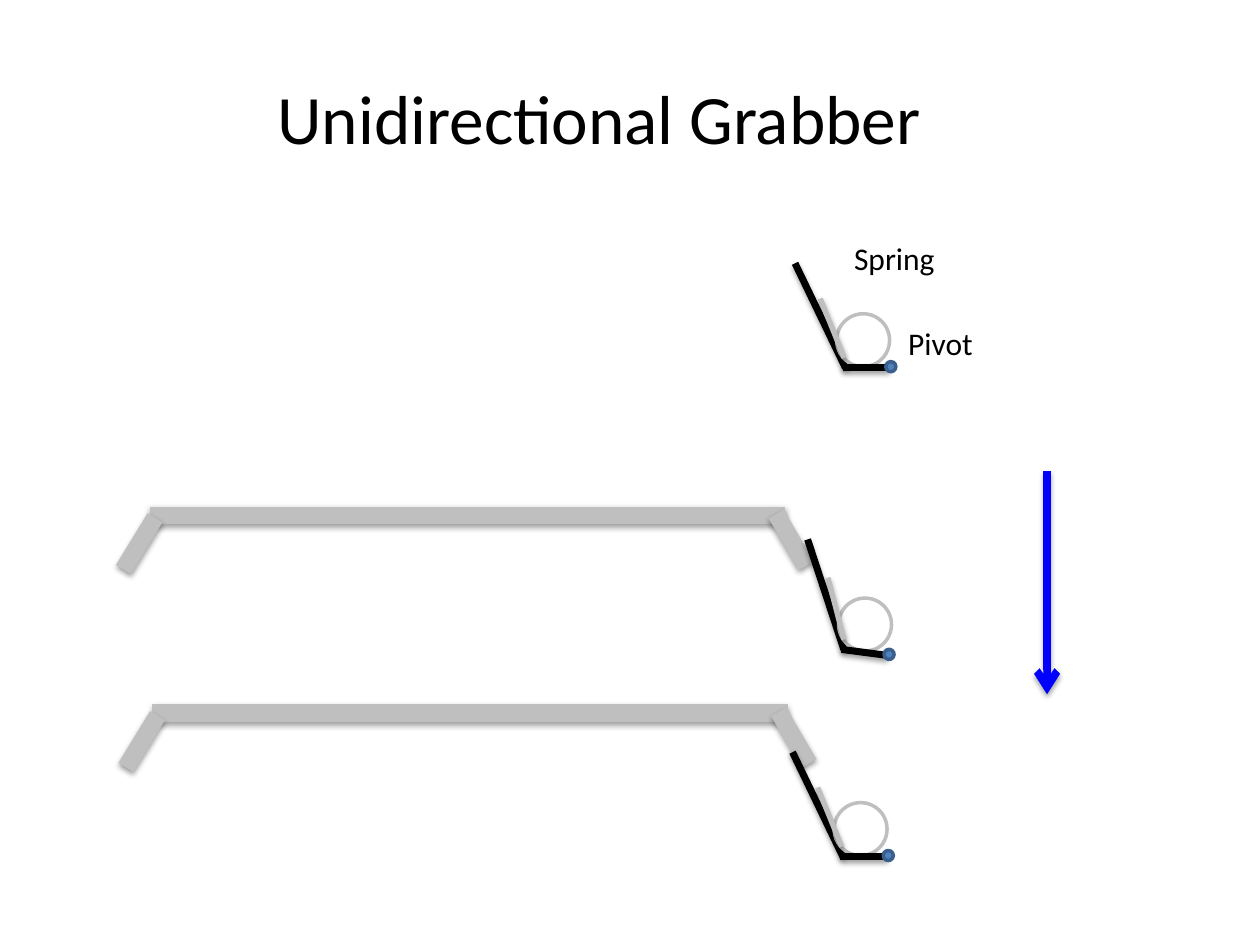
"""Build the Unidirectional Grabber slide."""
from lxml import etree
from pptx import Presentation
from pptx.dml.color import RGBColor
from pptx.enum.shapes import MSO_CONNECTOR, MSO_SHAPE
from pptx.enum.text import MSO_ANCHOR, PP_ALIGN
from pptx.oxml import parse_xml
from pptx.oxml.ns import nsdecls, qn
from pptx.util import Inches, Pt

STRAIGHT = MSO_CONNECTOR.STRAIGHT
OVAL = MSO_SHAPE.OVAL
CENTER, LEFT = PP_ALIGN.CENTER, PP_ALIGN.LEFT
MIDDLE, TOP = MSO_ANCHOR.MIDDLE, MSO_ANCHOR.TOP

BLACK = RGBColor(0x00, 0x00, 0x00)
GRAY = RGBColor(0xBF, 0xBF, 0xBF)
BLUE = RGBColor(0x00, 0x00, 0xFF)
PIVOT_FILL = RGBColor(0x4F, 0x81, 0xBD)
PIVOT_LINE = RGBColor(0x3A, 0x5F, 0x8C)
FONT = "Calibri"

TEXTS = [
    ("Unidirectional Grabber", (1.91, 0.3, 5.69, 1.25), 39.6, CENTER, MIDDLE, True),
    ("Spring", (6.68, 1.85, 0.85, 0.4), 18, LEFT, TOP, False),
    ("Pivot", (7.11, 2.52, 0.72, 0.4), 18, LEFT, TOP, False),
]

TRAY_LINES = [
    ((0, 0), (5.04, 0)),
    ((4.97, -0.01), (5.21, 0.4)),
    ((0.04, 0.02), (-0.21, 0.43)),
]
ARM = ((0, 0), (0.4, 0.83))
FOOT = ((0.38, 0.83), (0.75, 0.83))
SPRING_LEG = ((0.39, 0.75), (0.2, 0.28))
SPRING_COIL = (0.33, 0.4, 0.42)
PIVOT = (0.72, 0.78, 0.08)

TRAYS = {"upper": (1.19, 4.09), "lower": (1.21, 5.66)}
GRABBERS = {"free": (6.31, 2.09, 0), "closed": (6.29, 5.97, 0), "pushed": (6.35, 4.33, 7.5)}
MOTION = ((8.31, 3.74), (8.31, 5.51))

SHADOW = (
    f'<a:effectLst {nsdecls("a")}>'
    '<a:outerShdw blurRad="40000" dist="20000" dir="5400000" rotWithShape="0">'
    '<a:srgbClr val="000000"><a:alpha val="38000"/></a:srgbClr>'
    '</a:outerShdw></a:effectLst>'
)


def add_text(slide, text, box, size, alignment, anchor, wrap):
    frame = slide.shapes.add_textbox(*map(Inches, box)).text_frame
    frame.word_wrap = wrap
    frame.vertical_anchor = anchor
    paragraph = frame.paragraphs[0]
    paragraph.alignment = alignment
    run = paragraph.add_run()
    run.text = text
    run.font.name = FONT
    run.font.size = Pt(size)
    run.font.color.rgb = BLACK


def add_line(shapes, ends, color, width, origin=(0, 0)):
    points = [Inches(start + offset) for end in ends for start, offset in zip(origin, end)]
    connector = shapes.add_connector(STRAIGHT, *points)
    connector.line.color.rgb = color
    connector.line.width = Pt(width)
    connector._element.spPr.append(parse_xml(SHADOW))
    return connector


def add_circle(shapes, circle, origin, line_color, fill_color=None):
    left, top, size = circle
    shape = shapes.add_shape(
        OVAL, Inches(origin[0] + left), Inches(origin[1] + top), Inches(size), Inches(size)
    )
    shape.shadow.inherit = False
    shape.line.color.rgb = line_color
    shape.line.width = Pt(2)
    if fill_color is None:
        shape.fill.background()
    else:
        shape.fill.solid()
        shape.fill.fore_color.rgb = fill_color


def add_tray(slide, origin):
    shapes = slide.shapes.add_group_shape().shapes
    for ends in TRAY_LINES:
        add_line(shapes, ends, GRAY, 10, origin)


def add_grabber(slide, left, top, rotation):
    group = slide.shapes.add_group_shape()
    shapes, origin = group.shapes, (left, top)
    add_line(shapes, ARM, BLACK, 4, origin)
    add_circle(shapes, SPRING_COIL, origin, GRAY)
    add_line(shapes, FOOT, BLACK, 4, origin)
    add_line(shapes, SPRING_LEG, GRAY, 3, origin)
    add_circle(shapes, PIVOT, origin, PIVOT_LINE, PIVOT_FILL)
    group.rotation = rotation


def main():
    presentation = Presentation()
    presentation.slide_width, presentation.slide_height = Inches(10), Inches(7.5)
    slide = presentation.slides.add_slide(presentation.slide_layouts[6])
    for text in TEXTS:
        add_text(slide, *text)
    add_tray(slide, TRAYS["upper"])
    add_grabber(slide, *GRABBERS["free"])
    add_tray(slide, TRAYS["lower"])
    add_grabber(slide, *GRABBERS["closed"])
    add_grabber(slide, *GRABBERS["pushed"])
    arrow = add_line(slide.shapes, MOTION, BLUE, 4.25)
    etree.SubElement(arrow.line._get_or_add_ln(), qn("a:tailEnd"), type="arrow")
    presentation.save("out.pptx")


if __name__ == "__main__":
    main()
